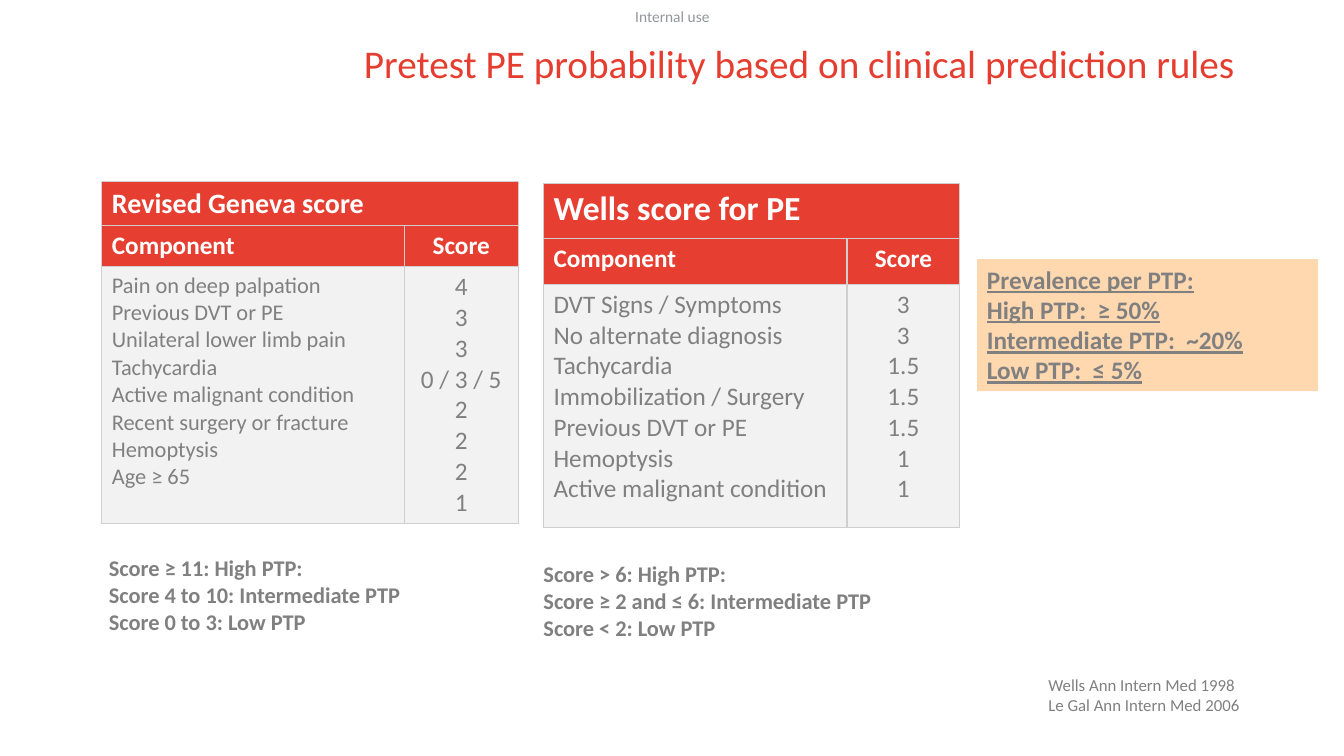
"""Build a slide comparing two clinical prediction scores for pulmonary embolism."""
from lxml import etree
from pptx import Presentation
from pptx.dml.color import RGBColor
from pptx.enum.shapes import MSO_SHAPE
from pptx.enum.text import MSO_ANCHOR, MSO_AUTO_SIZE, PP_ALIGN
from pptx.oxml.ns import qn
from pptx.util import Pt

PX = 9144
RED = RGBColor(0xE6, 0x3E, 0x31)
TITLE_RED = RGBColor(0xE5, 0x3E, 0x31)
WHITE = RGBColor(0xFF, 0xFF, 0xFF)
GREY = RGBColor(0x80, 0x80, 0x80)
LABEL_GREY = RGBColor(0x93, 0x97, 0x9B)
PALE_GREY = RGBColor(0xF2, 0xF2, 0xF2)
BORDER_GREY = RGBColor(0xD0, 0xCE, 0xCE)
PEACH = RGBColor(0xFF, 0xD8, 0xB0)
LEFT, CENTER = PP_ALIGN.LEFT, PP_ALIGN.CENTER
TOP = MSO_ANCHOR.TOP
NO_AUTOFIT = MSO_AUTO_SIZE.NONE
RECTANGLE = MSO_SHAPE.RECTANGLE


def write_text(frame, text, size=18, color=GREY, bold=False, underline=False,
               align=LEFT, line_spacing=1.0):
    """Write each line of text as one formatted paragraph."""
    frame.word_wrap = True
    for index, line in enumerate(text.split("\n")):
        paragraph = frame.add_paragraph() if index else frame.paragraphs[0]
        paragraph.text = line
        paragraph.alignment = align
        paragraph.line_spacing = line_spacing
        font = paragraph.font
        font.name, font.size, font.bold = "Calibri", Pt(size), bold
        font.underline = underline
        font.color.rgb = color


def place_text(shape, box, text, inset=True, **text_format):
    """Position a shape, set its text margins and write its text."""
    shape.left, shape.top, shape.width, shape.height = [value * PX for value in box]
    frame = shape.text_frame
    frame.auto_size = NO_AUTOFIT
    frame.vertical_anchor = TOP
    if not inset:
        frame.margin_left = frame.margin_right = 0
        frame.margin_top = frame.margin_bottom = 0
    write_text(frame, text, **text_format)


presentation = Presentation()
presentation.slide_width, presentation.slide_height = 1333 * PX, 750 * PX
slide = presentation.slides.add_slide(presentation.slide_layouts[5])
shapes = slide.shapes

place_text(shapes.title, (361, 44, 1146, 74),
           "Pretest PE probability based on clinical prediction rules",
           inset=False, size=28, color=TITLE_RED, line_spacing=0.9)

score_tables = [
    {"name": "Wells score for PE", "box": (539, 182, 414, 341), "title_size": 24,
     "component_size": 18, "columns": (301, 112), "rows": (55, 45, 241),
     "components": "DVT Signs / Symptoms\nNo alternate diagnosis\nTachycardia\n"
                   "Immobilization / Surgery\nPrevious DVT or PE\nHemoptysis\n"
                   "Active malignant condition",
     "scores": "3\n3\n1.5\n1.5\n1.5\n1\n1"},
    {"name": "Revised Geneva score", "box": (101, 180, 413, 339), "title_size": 20,
     "component_size": 16, "columns": (300, 113), "rows": (44, 40, 255),
     "components": "Pain on deep palpation\nPrevious DVT or PE\n"
                   "Unilateral lower limb pain\nTachycardia\n"
                   "Active malignant condition\nRecent surgery or fracture\n"
                   "Hemoptysis\nAge ≥ 65",
     "scores": "4\n3\n3\n0 / 3 / 5\n2\n2\n2\n1"},
]
for score in score_tables:
    left, top, width, height = [value * PX for value in score["box"]]
    table = shapes.add_table(3, 2, left, top, width, height).table
    table.horz_banding = False
    for column, column_width in zip(table.columns, score["columns"]):
        column.width = column_width * PX
    for row, row_height in zip(table.rows, score["rows"]):
        row.height = row_height * PX
    for index, cell in enumerate(table.iter_cells()):
        properties = cell._tc.get_or_add_tcPr()
        for side in ("a:lnL", "a:lnR", "a:lnT", "a:lnB"):
            line = etree.SubElement(properties, qn(side), w=str(Pt(1)))
            solid = etree.SubElement(line, qn("a:solidFill"))
            etree.SubElement(solid, qn("a:srgbClr"), val=str(BORDER_GREY))
        cell.fill.solid()
        cell.fill.fore_color.rgb = RED if index < 4 else PALE_GREY
    table.cell(0, 0).merge(table.cell(0, 1))
    header = {"color": WHITE, "bold": True}
    write_text(table.cell(0, 0).text_frame, score["name"], size=score["title_size"], **header)
    write_text(table.cell(1, 0).text_frame, "Component", **header)
    write_text(table.cell(1, 1).text_frame, "Score", align=CENTER, **header)
    write_text(table.cell(2, 0).text_frame, score["components"], size=score["component_size"])
    write_text(table.cell(2, 1).text_frame, score["scores"], align=CENTER)

prevalence = shapes.add_shape(RECTANGLE, 0, 0, PX, PX)
prevalence.shadow.inherit = False
prevalence.fill.solid()
prevalence.fill.fore_color.rgb = PEACH
prevalence.line.fill.background()
place_text(prevalence, (969, 257, 338, 131),
           "Prevalence per PTP:\nHigh PTP:  ≥ 50%\nIntermediate PTP:  ~20%\nLow PTP:  ≤ 5%",
           bold=True, underline=True)

notes = [
    ((630, 7, 78, 18), "Internal use",
     {"inset": False, "size": 11, "color": LABEL_GREY}),
    ((1030, 664, 277, 50), "Wells Ann Intern Med 1998\nLe Gal Ann Intern Med 2006",
     {"size": 12}),
    ((539, 556, 438, 81),
     "Score > 6: High PTP:\nScore ≥ 2 and ≤ 6: Intermediate PTP\nScore < 2: Low PTP",
     {"inset": False, "size": 16, "bold": True}),
    ((108, 550, 410, 81),
     "Score ≥ 11: High PTP:\nScore 4 to 10: Intermediate PTP\nScore 0 to 3: Low PTP",
     {"inset": False, "size": 16, "bold": True}),
]
for box, text, text_format in notes:
    place_text(shapes.add_textbox(0, 0, PX, PX), box, text, **text_format)

presentation.save("out.pptx")
